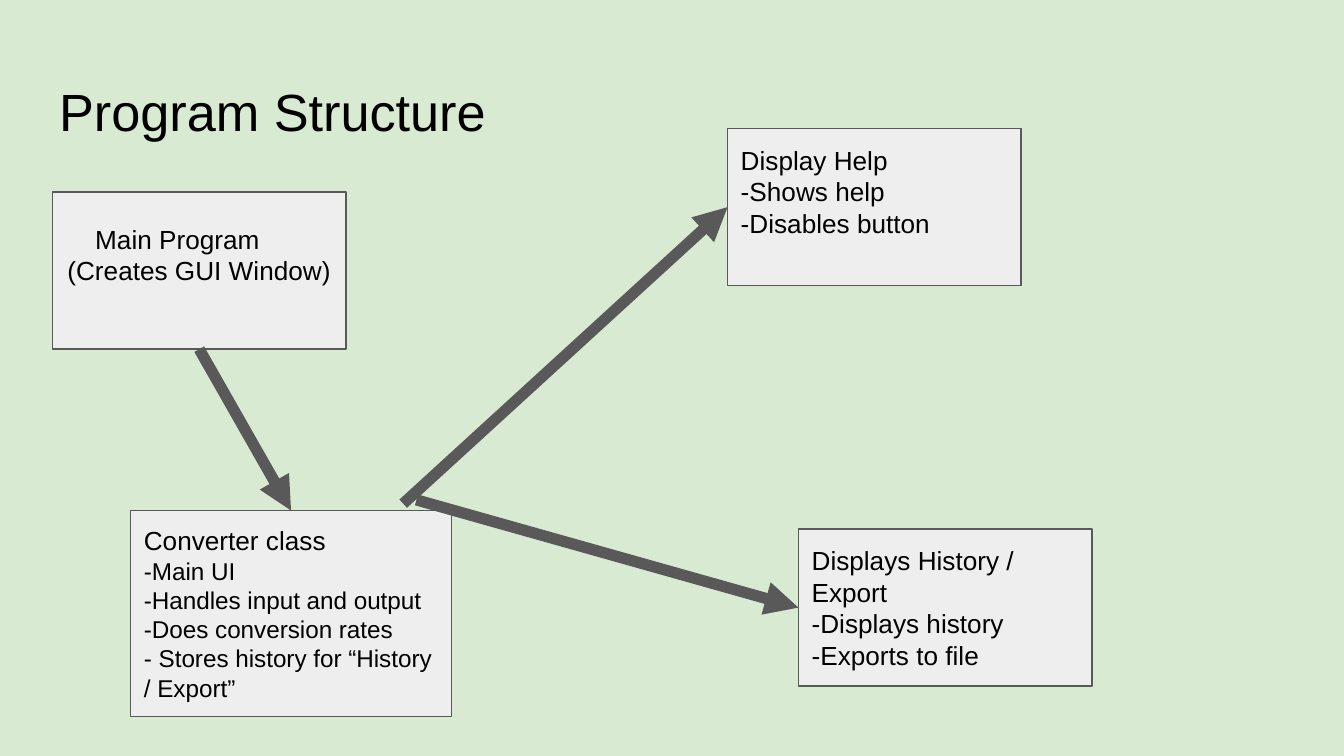
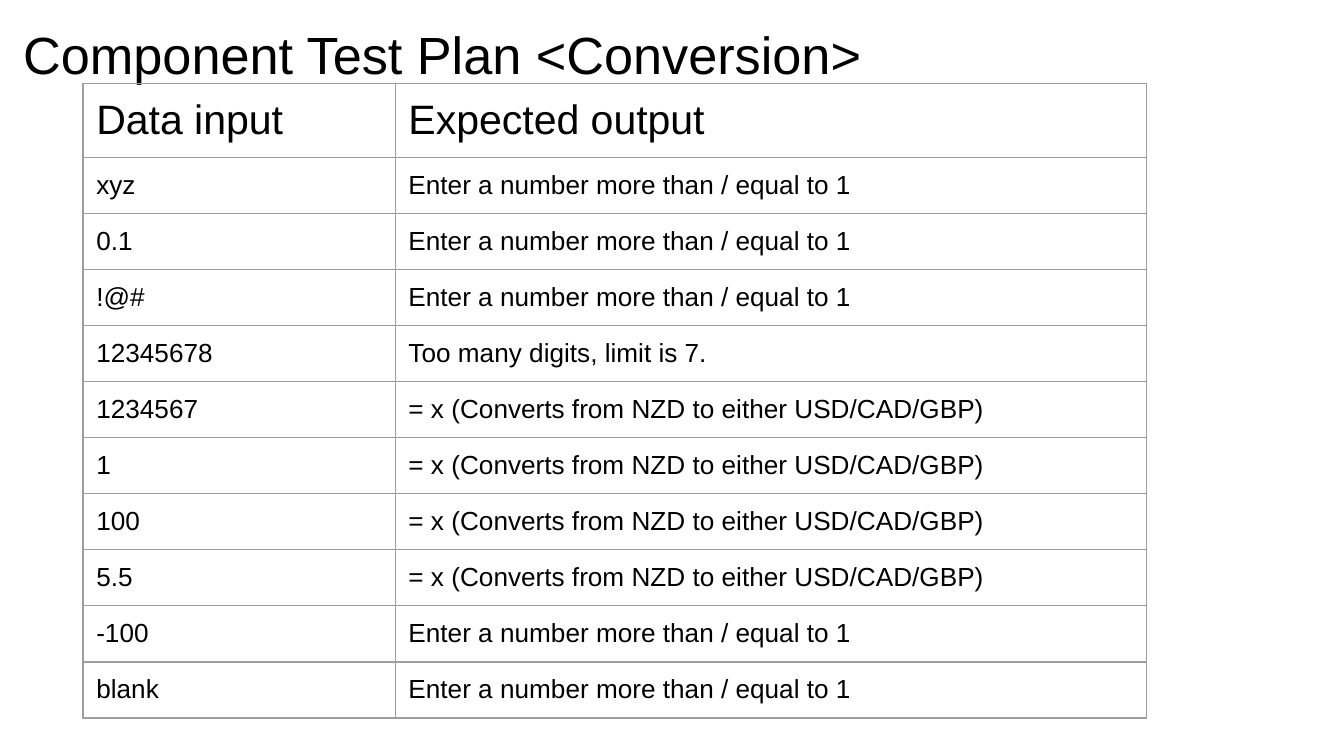
from lxml import etree
from pptx import Presentation
from pptx import util as u
from pptx.dml.color import RGBColor
from pptx.enum import shapes, text
from pptx.oxml.ns import qn

COLOURS = {"mint": "D9EAD3", "white": "FFFFFF", "box": "EEEEEE",
           "stroke": "595959", "grid": "9E9E9E", "ink": "000000"}
FRAME = {"word_wrap": True, "margin_left": u.Cm(0.25), "margin_right": u.Cm(0.25),
         "margin_top": u.Cm(0.25), "margin_bottom": u.Cm(0.25)}
FONT = {"name": "Arial", "bold": False}


def colour(name):
    return RGBColor.from_string(COLOURS[name])


def write(frame, lines, frame_format):
    for key, value in {**FRAME, **frame_format}.items():
        setattr(frame, key, value)
    for number, (words, size) in enumerate(lines):
        paragraph = frame.paragraphs[0] if number == 0 else frame.add_paragraph()
        paragraph.alignment = text.PP_ALIGN.LEFT
        run = paragraph.add_run()
        run.text = words
        for key, value in {**FONT, "size": u.Pt(size)}.items():
            setattr(run.font, key, value)
        run.font.color.rgb = colour("ink")
        run._r.get_or_add_rPr().set("lang", "en")


deck = Presentation()
deck.slide_width, deck.slide_height = u.Cm(25.4), u.Cm(14.29)

pages = []
for title, background, left, top in [
    ("Program Structure", "mint", 0.87, 1.24),
    ("Component Test Plan <Conversion>", "white", 0.19, 0.18),
]:
    page = deck.slides.add_slide(deck.slide_layouts[6])
    page.background.fill.solid()
    page.background.fill.fore_color.rgb = colour(background)
    heading = page.shapes.add_textbox(u.Cm(left), u.Cm(top), u.Cm(23.67), u.Cm(1.6))
    write(heading.text_frame, [(title, 28)], {"vertical_anchor": text.MSO_ANCHOR.TOP})
    pages.append(page)
structure, test_plan = pages

parts = {}
for part, left, top, width, height, bottom, lines in [
    ("main", 0.99, 3.63, 5.55, 2.97, 0.85,
     [("Main Program", 14), ("(Creates GUI Window)", 14)]),
    ("help", 13.75, 2.43, 5.55, 2.97, 0.85,
     [("Display Help", 14), ("-Shows help", 14), ("-Disables button", 14)]),
    ("converter", 2.47, 9.65, 6.06, 3.89, 0.25,
     [("Converter class", 14), ("-Main UI", 13), ("-Handles input and output", 13),
      ("-Does conversion rates", 13), ("- Stores history for “History / Export”", 13)]),
    ("history", 15.09, 10, 5.55, 2.97, 0.25,
     [("Displays History / Export", 14), ("-Displays history", 14), ("-Exports to file", 14)]),
]:
    box = structure.shapes.add_shape(shapes.MSO_SHAPE.RECTANGLE, u.Cm(left), u.Cm(top),
                                     u.Cm(width), u.Cm(height))
    box.shadow.inherit = False
    box.fill.solid()
    box.fill.fore_color.rgb = colour("box")
    box.line.color.rgb = colour("stroke")
    box.line.width = u.Pt(0.75)
    write(box.text_frame, lines, {"vertical_anchor": text.MSO_ANCHOR.MIDDLE,
                                  "margin_bottom": u.Cm(bottom)})
    parts[part] = box

program_name, program_role = parts["main"].text_frame.paragraphs
program_name._p.get_or_add_pPr().set("marL", str(u.Cm(0.56)))
program_role.alignment = text.PP_ALIGN.CENTER

TOP, LEFT, BOTTOM = 0, 1, 2
for start_x, start_y, source, target, site in [
    (3.76, 6.6, "main", "converter", TOP),
    (7.62, 9.52, None, "help", LEFT),
    (7.87, 9.45, None, "history", LEFT),
]:
    arrow = structure.shapes.add_connector(shapes.MSO_CONNECTOR.STRAIGHT, u.Cm(start_x),
                                           u.Cm(start_y), u.Cm(start_x), u.Cm(start_y))
    if source:
        arrow.begin_connect(parts[source], BOTTOM)
    arrow.end_connect(parts[target], site)
    arrow.line.color.rgb = colour("stroke")
    arrow.line.width = u.Pt(6)
    etree.SubElement(arrow.line._get_or_add_ln(), qn("a:tailEnd"), type="triangle")
    etree.SubElement(arrow._element.spPr, qn("a:effectLst"))

too_small = "Enter a number more than / equal to 1"
converted = "= x (Converts from NZD to either USD/CAD/GBP)"
tests = [("Data input", "Expected output"), ("xyz", too_small), ("0.1", too_small),
         ("!@#", too_small), ("12345678", "Too many digits, limit is 7."),
         ("1234567", converted), ("1", converted), ("100", converted),
         ("5.5", converted), ("-100", too_small), ("blank", too_small)]

plan = test_plan.shapes.add_table(len(tests), 2, u.Cm(1.57), u.Cm(1.58),
                                  u.Cm(20.1), u.Cm(11.66)).table
for option in ("first_row", "horz_banding"):
    setattr(plan, option, False)
for column, width in zip(plan.columns, (5.9, 14.2)):
    column.width = u.Cm(width)
for number, test in enumerate(tests):
    plan.rows[number].height = u.Cm(1.06)
    for cell, words in zip(plan.rows[number].cells, test):
        write(cell.text_frame, [(words, 14 if number else 22)], {})
        for side, gap in {"left": 0.25, "right": 0.25, "top": 0.25, "bottom": 0.21}.items():
            setattr(cell, f"margin_{side}", u.Cm(gap))
        properties = cell._tc.get_or_add_tcPr()
        for side in ("lnL", "lnR", "lnT", "lnB"):
            border = etree.SubElement(properties, qn(f"a:{side}"), w=str(u.Pt(0.75)))
            paint = etree.SubElement(border, qn("a:solidFill"))
            etree.SubElement(paint, qn("a:srgbClr"), val=COLOURS["grid"])
        cell.fill.background()

deck.save("out.pptx")
